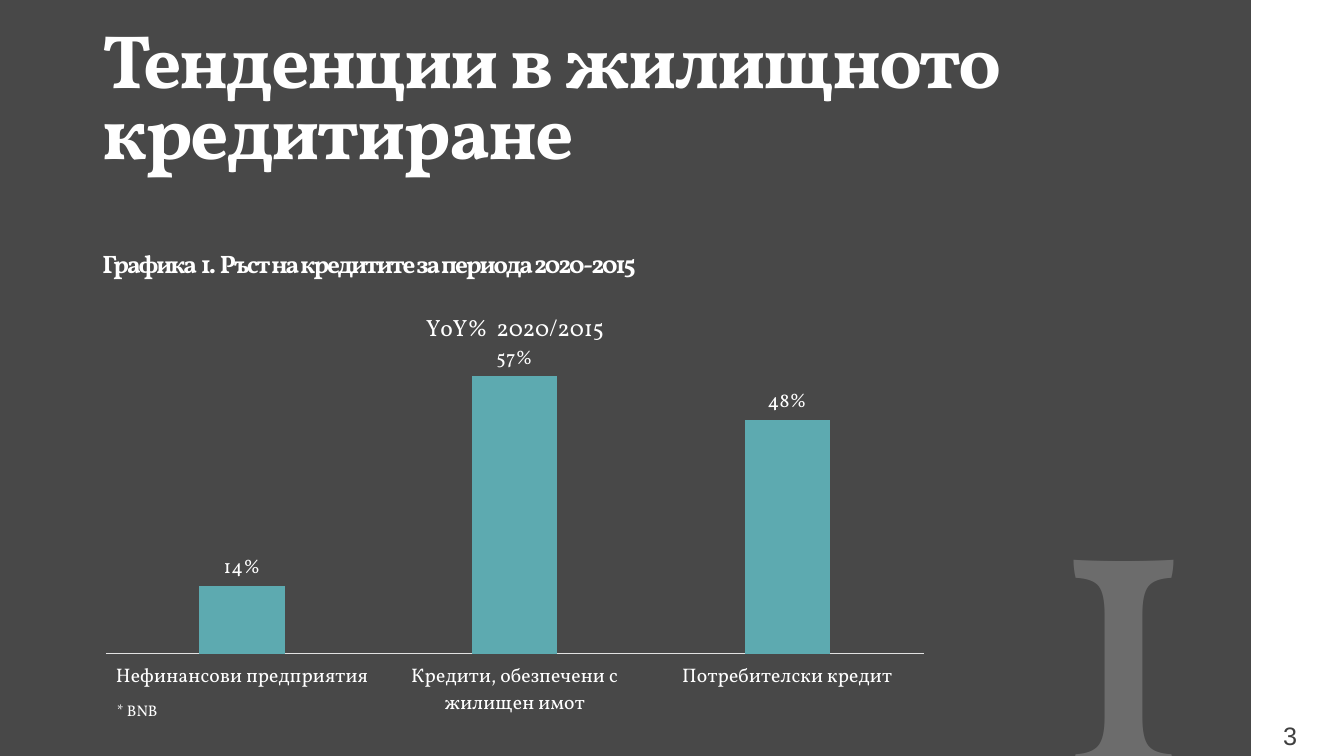
from lxml import etree
from pptx import Presentation
from pptx.chart.data import CategoryChartData
from pptx.dml.color import RGBColor
from pptx.enum.chart import XL_CHART_TYPE as ChartType, XL_LABEL_POSITION as LabelPos
from pptx.enum.chart import XL_TICK_LABEL_POSITION as TickLabels, XL_TICK_MARK as TickMark
from pptx.enum.shapes import MSO_SHAPE as Shape
from pptx.enum.text import PP_ALIGN as Align
from pptx.oxml import parse_xml
from pptx.oxml.ns import nsdecls, qn
from pptx.util import Pt

CHARCOAL = RGBColor(0x48, 0x48, 0x48)
WHITE = RGBColor(0xFF, 0xFF, 0xFF)
TEAL = RGBColor(0x5D, 0xAA, 0xB0)
AXIS_GREY = RGBColor(0xE2, 0xE2, 0xE2)
NUMBER_GREY = RGBColor(0x3F, 0x3F, 0x3F)
SERIF = "Vollkorn"
GROWTH_NAME = "YoY%  2020/2015"
GROWTH = {
    "Нефинансови предприятия": 0.14,
    "Кредити, обезпечени с жилищен имот": 0.57,
    "Потребителски кредит": 0.48,
}


def set_font(font, size, color=WHITE, face=SERIF, bold=False):
    font.size, font.name, font.bold = Pt(size), face, bold
    font.color.rgb = color


def add_text(slide, text, box, size, color=WHITE, face=SERIF, bold=False,
             align=Align.LEFT, line_spacing=1.0, tracking=0, opacity=100):
    """Place text in a (left, top, width, height) box given in points."""
    frame = slide.shapes.add_textbox(*map(Pt, box)).text_frame
    frame.word_wrap = True
    paragraph = frame.paragraphs[0]
    paragraph.alignment = align
    paragraph.line_spacing = line_spacing
    run = paragraph.add_run()
    run.text = text
    set_font(run.font, size, color, face, bold)
    properties = run.font._element
    if tracking:
        properties.set("spc", str(int(tracking * 100)))
    if opacity < 100:
        tint = properties.find(qn("a:solidFill"))[0]
        etree.SubElement(tint, qn("a:alpha")).set("val", str(opacity * 1000))


def add_panel(slide, box):
    panel = slide.shapes.add_shape(Shape.RECTANGLE, *map(Pt, box))
    panel.shadow.inherit = False
    panel.fill.solid()
    panel.fill.fore_color.rgb = CHARCOAL
    panel.line.fill.background()


def add_heading(slide, box):
    left, top, width, height = box
    add_text(slide, "Тенденции в жилищното кредитиране",
             (left, top, width, height - 35), 54, bold=True,
             line_spacing=0.78, tracking=-1.5)
    add_text(slide, "Графика  1.  Ръст на кредитите за периода 2020-2015",
             (left, top + height - 35, width, 35), 18, bold=True, tracking=-1.5)


def add_growth_chart(slide, box):
    data = CategoryChartData(number_format="0%")
    data.categories = list(GROWTH)
    data.add_series(GROWTH_NAME, list(GROWTH.values()))
    chart = slide.shapes.add_chart(
        ChartType.COLUMN_CLUSTERED, *map(Pt, box), data).chart
    set_font(chart.font, 14)
    chart.has_legend = False

    # Title
    title_frame = chart.chart_title.text_frame
    title_frame.text = GROWTH_NAME
    set_font(title_frame.paragraphs[0].runs[0].font, 16.8)
    chart.chart_title.include_in_layout = False

    # Axes
    categories = chart.category_axis
    categories.major_tick_mark = categories.minor_tick_mark = TickMark.NONE
    categories.tick_label_position = TickLabels.LOW
    categories.format.line.color.rgb = AXIS_GREY
    categories.format.line.width = Pt(0.75)
    set_font(categories.tick_labels.font, 14)
    growth_axis = chart.value_axis
    growth_axis.visible = False
    growth_axis.has_major_gridlines = False
    growth_axis.minimum_scale, growth_axis.maximum_scale = 0, 0.6

    # Columns and their labels
    plot = chart.plots[0]
    plot.gap_width, plot.overlap, plot.vary_by_categories = 219, -27, False
    columns = plot.series[0]
    columns.format.fill.solid()
    columns.format.fill.fore_color.rgb = TEAL
    labels = columns.data_labels
    labels.show_value = True
    labels.number_format, labels.number_format_is_linked = "0%", False
    labels.position = LabelPos.OUTSIDE_END
    set_font(labels.font, 14)

    # Plot area, as shares of the chart box
    shares = {"x": 0.02, "y": 0.16, "w": 0.96, "h": 0.68}
    places = "".join(f'<c:{side} val="{share}"/>' for side, share in shares.items())
    plot_area = chart._chartSpace.chart.plotArea
    for layout in plot_area.findall(qn("c:layout")):
        plot_area.remove(layout)
    plot_area.insert(0, parse_xml(
        f'<c:layout {nsdecls("c")}><c:manualLayout><c:layoutTarget val="inner"/>'
        f'<c:xMode val="edge"/><c:yMode val="edge"/>{places}'
        '</c:manualLayout></c:layout>'))


def main():
    deck = Presentation()
    deck.slide_width, deck.slide_height = Pt(960), Pt(540)
    slide = deck.slides.add_slide(deck.slide_layouts[6])
    add_panel(slide, (-1.5, 0, 895, 540))
    add_heading(slide, (66, 19.5, 745, 189))
    # Large section number
    add_text(slide, "1", (672, 288, 196, 246), 300, align=Align.RIGHT,
             line_spacing=0.9, opacity=20)
    # Data source
    add_text(slide, "* BNB", (76.5, 497, 147, 21), 11)
    add_growth_chart(slide, (63.5, 209.5, 608.5, 306.5))
    # Page number
    add_text(slide, "3", (909.5, 511, 28, 29), 18, NUMBER_GREY, "Arial")
    deck.save("out.pptx")


if __name__ == "__main__":
    main()
